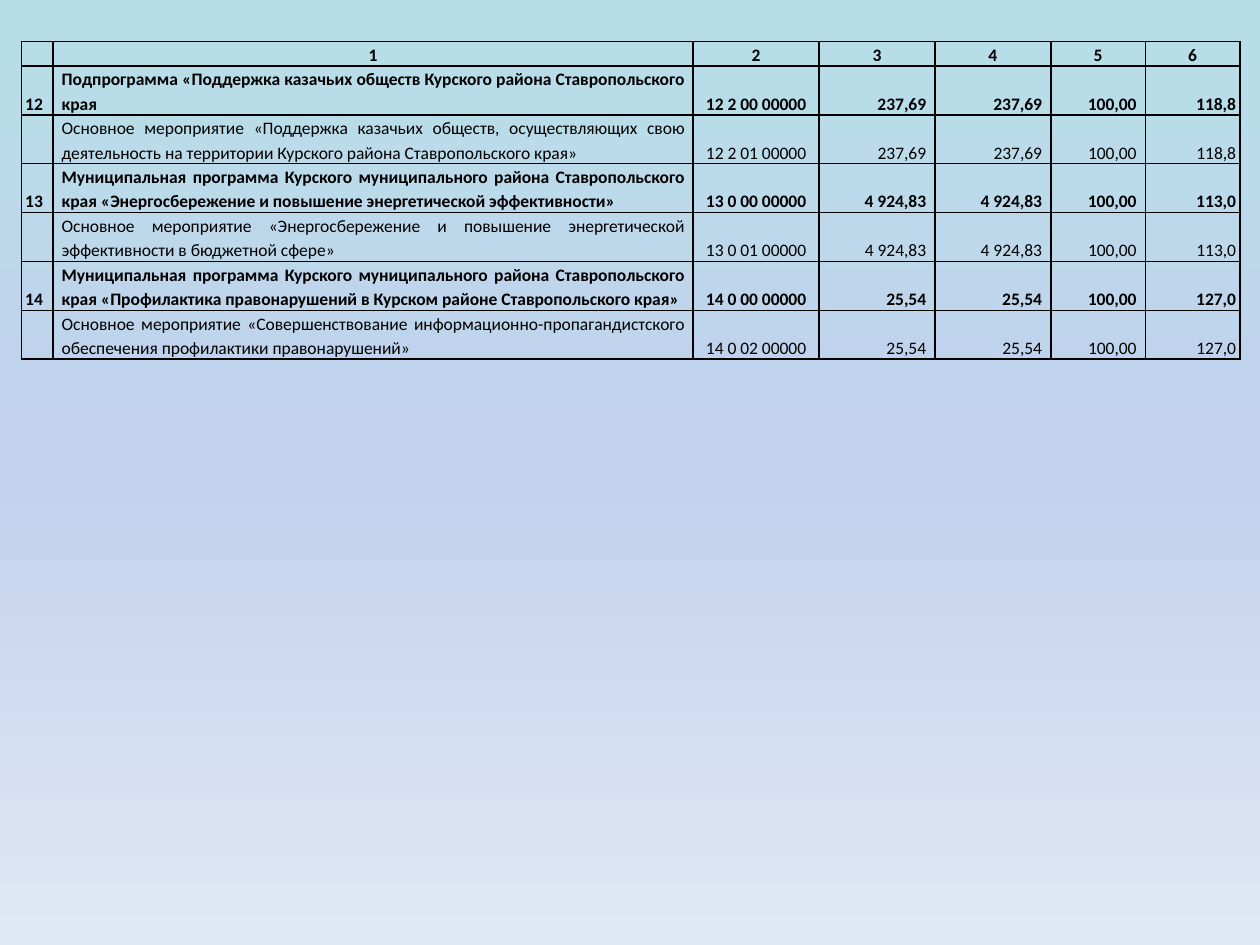
from copy import deepcopy

from lxml import etree
from pptx import Presentation
from pptx.dml.color import RGBColor
from pptx.enum import text
from pptx.oxml.ns import qn
from pptx.util import Inches, Pt

COLORS = {"ink": "000000", "top": "B7DEE8", "middle": "C2D1ED", "bottom": "E1E8F5"}
FONT, SIZE = "Calibri", 10

HEADER = ("", "1", "2", "3", "4", "5", "6")
PROGRAMS = [
    ("12", "Подпрограмма «Поддержка казачьих обществ Курского района Ставропольского края",
     "12 2 00 00000", "237,69", "237,69", "100,00", "118,8"),
    ("", "Основное мероприятие «Поддержка казачьих обществ, осуществляющих свою деятельность на территории Курского района Ставропольского края»",
     "12 2 01 00000", "237,69", "237,69", "100,00", "118,8"),
    ("13", "Муниципальная программа Курского муниципального района Ставропольского края «Энергосбережение и повышение энергетической эффективности»",
     "13 0 00 00000", "4 924,83", "4 924,83", "100,00", "113,0"),
    ("", "Основное мероприятие «Энергосбережение и повышение энергетической эффективности в бюджетной сфере»",
     "13 0 01 00000", "4 924,83", "4 924,83", "100,00", "113,0"),
    ("14", "Муниципальная программа Курского муниципального района Ставропольского края «Профилактика правонарушений в Курском районе Ставропольского края»",
     "14 0 00 00000", "25,54", "25,54", "100,00", "127,0"),
    ("", "Основное мероприятие «Совершенствование информационно-пропагандистского обеспечения профилактики правонарушений»",
     "14 0 02 00000", "25,54", "25,54", "100,00", "127,0"),
]
ROWS = [HEADER] + PROGRAMS
COL_WIDTHS = (0.25, 5.08, 1, 0.92, 0.92, 0.75, 0.75)
ROW_HEIGHTS = [0.19] + [0.38] * len(PROGRAMS)
ALIGN = text.PP_ALIGN
COL_ALIGNS = [ALIGN.LEFT, ALIGN.JUSTIFY, ALIGN.CENTER] + [ALIGN.RIGHT] * 4


def rgb(name):
    return RGBColor.from_string(COLORS[name])


def paint_background(s):
    fill = s.background.fill
    fill.gradient()
    fill.gradient_angle = 270
    stop_list = next(s.element.iter(qn("a:gsLst")))
    stop_list.append(deepcopy(stop_list[-1]))
    for stop, name, position in zip(fill.gradient_stops, ("top", "middle", "bottom"), (0, 0.5, 1)):
        stop.color.rgb = rgb(name)
        stop.position = position


def add_borders(cell):
    tc_pr = cell._tc.get_or_add_tcPr()
    for i, side in enumerate(("lnL", "lnR", "lnT", "lnB")):
        line = etree.Element(qn(f"a:{side}"), w=str(Pt(1)))
        solid = etree.SubElement(line, qn("a:solidFill"))
        etree.SubElement(solid, qn("a:srgbClr"), val=COLORS["ink"])
        tc_pr.insert(i, line)


def fill_cell(cell, value, align, margin, bold):
    cell.fill.background()
    add_borders(cell)
    cell.vertical_anchor = text.MSO_ANCHOR.BOTTOM
    cell.margin_left = cell.margin_right = Inches(margin)
    cell.margin_top = cell.margin_bottom = 0
    p = cell.text_frame.paragraphs[0]
    p.alignment = align
    p.line_spacing = 1.15
    p.font.name, p.font.size, p.font.bold = FONT, Pt(SIZE), bold
    p.font.color.rgb = rgb("ink")
    if value:
        p.add_run().text = value
    else:
        etree.SubElement(p._p, qn("a:endParaRPr"), sz=str(SIZE * 100))


prs = Presentation()
prs.slide_width, prs.slide_height = Inches(10), Inches(7.5)
s = prs.slides.add_slide(prs.slide_layouts[6])
paint_background(s)

table = s.shapes.add_table(
    len(ROWS), len(COL_WIDTHS), Inches(0.17), Inches(0.33),
    Inches(sum(COL_WIDTHS)), Inches(sum(ROW_HEIGHTS))).table
table.first_row = table.horz_banding = False
for column, width in zip(table.columns, COL_WIDTHS):
    column.width = Inches(width)
for row, height in zip(table.rows, ROW_HEIGHTS):
    row.height = Inches(height)

for r, values in enumerate(ROWS):
    for c, value in enumerate(values):
        is_header = r == 0
        align = ALIGN.CENTER if is_header else COL_ALIGNS[c]
        margin = 0.03 if is_header or c in (0, len(values) - 1) else 0.07
        fill_cell(table.cell(r, c), value, align, margin, is_header or bool(values[0]))

prs.save("out.pptx")
